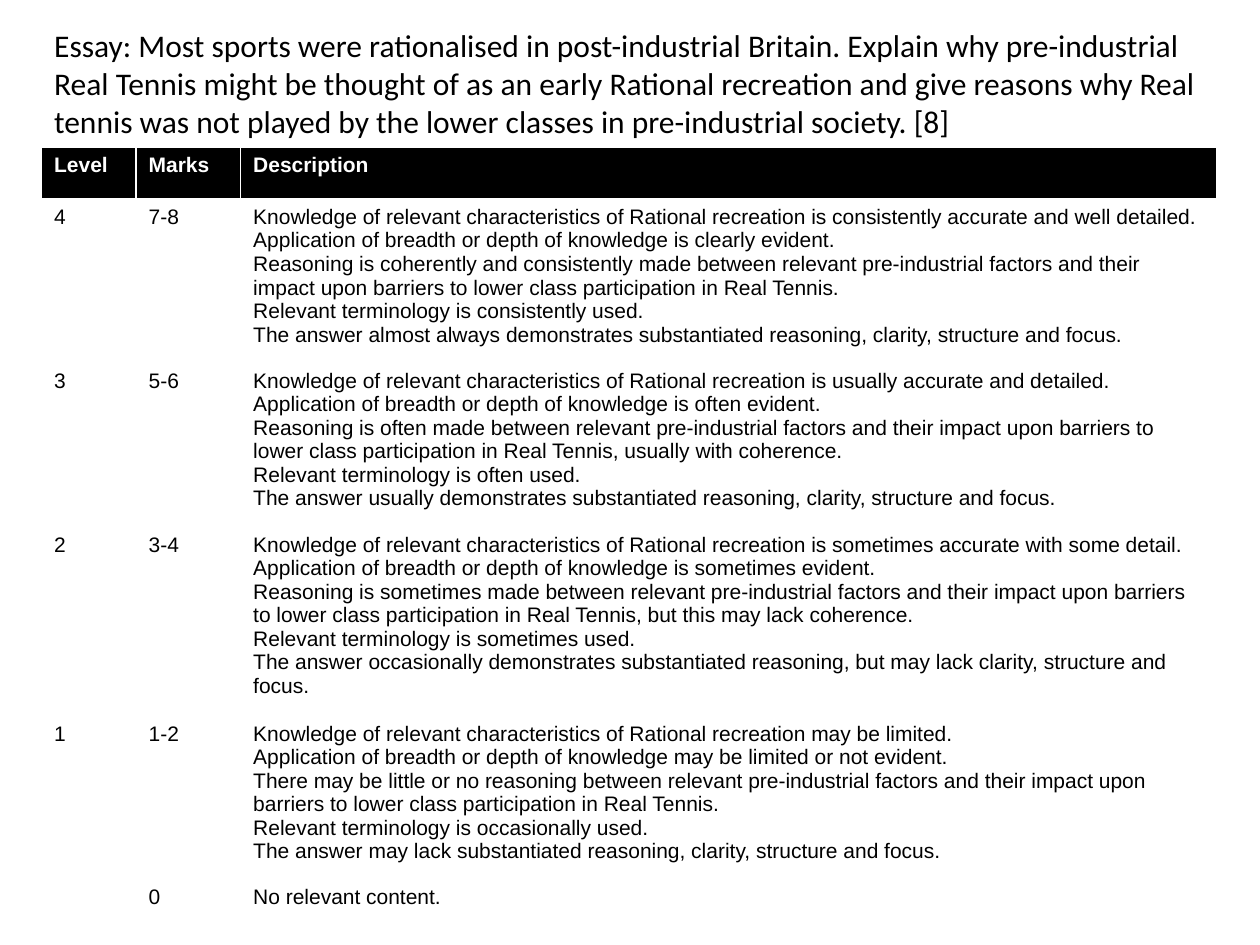
from pptx import Presentation
from pptx.dml.color import RGBColor
from pptx.enum.text import MSO_ANCHOR, PP_ALIGN
from pptx.util import Inches, Pt

QUESTION = (
    "Essay: Most sports were rationalised in post-industrial Britain. Explain why "
    "pre-industrial Real Tennis might be thought of as an early Rational recreation "
    "and give reasons why Real tennis was not played by the lower classes in "
    "pre-industrial society. [8]"
)
COLUMN_WIDTHS = [0.75, 0.83, 7.75]

# Each row: height in inches, level, marks, description lines
MARK_SCHEME = [
    (0.41, "Level", "Marks", ["Description"]),
    (1.3, "4", "7-8", [
        "Knowledge of relevant characteristics of Rational recreation is consistently accurate and well detailed.",
        "Application of breadth or depth of knowledge is clearly evident.",
        "Reasoning is coherently and consistently made between relevant pre-industrial factors and their "
        "impact upon barriers to lower class participation in Real Tennis.",
        "Relevant terminology is consistently used.",
        "The answer almost always demonstrates substantiated reasoning, clarity, structure and focus.",
    ]),
    (1.3, "3", "5-6", [
        "Knowledge of relevant characteristics of Rational recreation is usually accurate and detailed.",
        "Application of breadth or depth of knowledge is often evident.",
        "Reasoning is often made between relevant pre-industrial factors and their impact upon barriers to "
        "lower class participation in Real Tennis, usually with coherence.",
        "Relevant terminology is often used.",
        "The answer usually demonstrates substantiated reasoning, clarity, structure and focus.",
    ]),
    (1.5, "2", "3-4", [
        "Knowledge of relevant characteristics of Rational recreation is sometimes accurate with some detail.",
        "Application of breadth or depth of knowledge is sometimes evident.",
        "Reasoning is sometimes made between relevant pre-industrial factors and their impact upon barriers "
        "to lower class participation in Real Tennis, but this may lack coherence.",
        "Relevant terminology is sometimes used.",
        "The answer occasionally demonstrates substantiated reasoning, but may lack clarity, structure and focus.",
    ]),
    (1.3, "1", "1-2", [
        "Knowledge of relevant characteristics of Rational recreation may be limited.",
        "Application of breadth or depth of knowledge may be limited or not evident.",
        "There may be little or no reasoning between relevant pre-industrial factors and their impact upon "
        "barriers to lower class participation in Real Tennis.",
        "Relevant terminology is occasionally used.",
        "The answer may lack substantiated reasoning, clarity, structure and focus.",
    ]),
    (0.41, "", "0", ["No relevant content."]),
]


def color(hex_string):
    return RGBColor.from_string(hex_string)


def add_span(para, text, font, size, hex_string, bold=False):
    span = para.add_run()
    span.text = text
    span.font.name = font
    span.font.size = Pt(size)
    span.font.bold = bold
    span.font.color.rgb = color(hex_string)


def place_question(page, left, top, width, height):
    title = page.shapes.title
    title.left, title.top = Inches(left), Inches(top)
    title.width, title.height = Inches(width), Inches(height)
    frame = title.text_frame
    frame.word_wrap = True
    frame.vertical_anchor = MSO_ANCHOR.TOP
    para = frame.paragraphs[0]
    para.alignment = PP_ALIGN.LEFT
    add_span(para, QUESTION, "Calibri", 18, "000000")


def fill_cell(cell, lines, is_header):
    if is_header:
        cell.fill.solid()
        cell.fill.fore_color.rgb = color("000000")
    else:
        cell.fill.background()
    frame = cell.text_frame
    for index, line in enumerate(lines):
        para = frame.add_paragraph() if index else frame.paragraphs[0]
        if line:
            add_span(para, line, "Arial", 12, "FFFFFF" if is_header else "000000", is_header)


def place_mark_scheme(page, left, top, width, height):
    table = page.shapes.add_table(
        len(MARK_SCHEME), len(COLUMN_WIDTHS),
        Inches(left), Inches(top), Inches(width), Inches(height),
    ).table
    # The default style supplies the white rules, heavier below the header
    table.horz_banding = False
    for column, column_width in zip(table.columns, COLUMN_WIDTHS):
        column.width = Inches(column_width)
    for index, (row_height, level, marks, description) in enumerate(MARK_SCHEME):
        row = table.rows[index]
        row.height = Inches(row_height)
        for cell, lines in zip(row.cells, ([level], [marks], description)):
            fill_cell(cell, lines, index == 0)


def main():
    deck = Presentation()
    deck.slide_width, deck.slide_height = Inches(10), Inches(7.5)
    page = deck.slides.add_slide(deck.slide_layouts[5])
    place_mark_scheme(page, 0.33, 1.17, 9.33, 6.22)
    place_question(page, 0.33, 0.16, 9.5, 1.01)
    deck.save("out.pptx")


if __name__ == "__main__":
    main()
